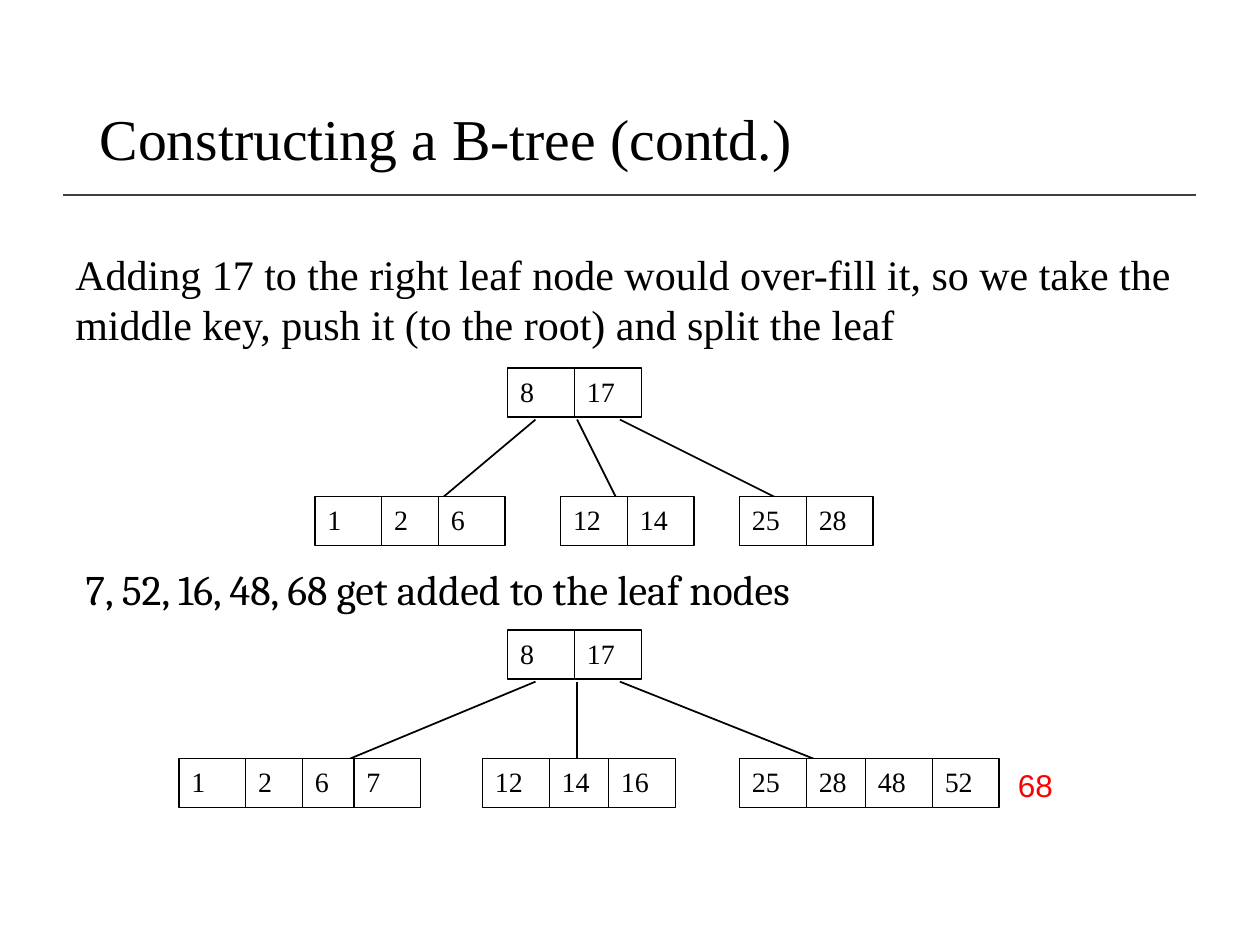
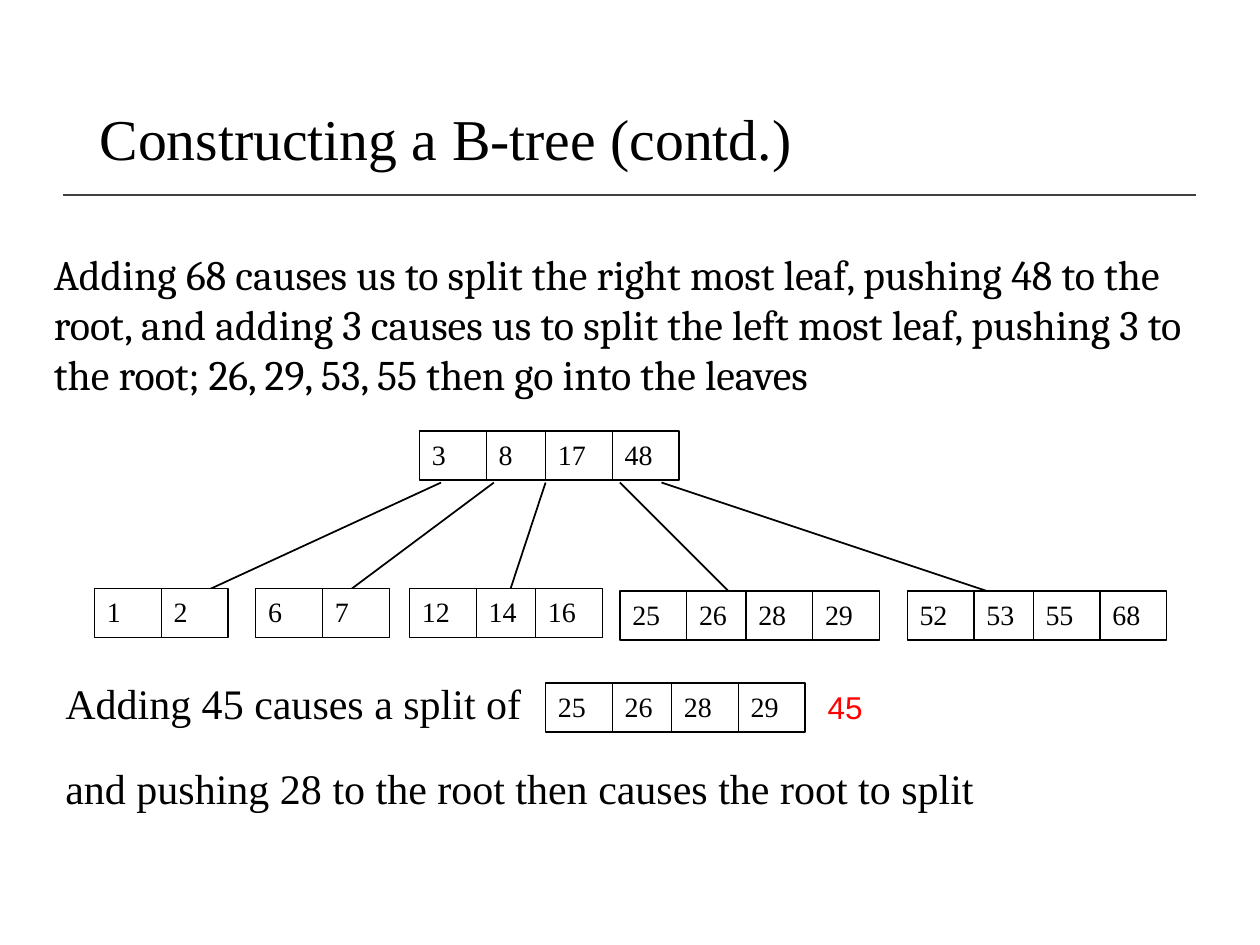
from pptx import Presentation
from pptx.dml.color import RGBColor
from pptx.enum.shapes import MSO_CONNECTOR, MSO_SHAPE
from pptx.enum.text import MSO_ANCHOR, MSO_AUTO_SIZE, PP_ALIGN
from pptx.oxml.ns import qn
from pptx.util import Inches, Pt
from lxml import etree

LINE, RECT = MSO_CONNECTOR.STRAIGHT, MSO_SHAPE.RECTANGLE
TOP, MIDDLE, LEFT = MSO_ANCHOR.TOP, MSO_ANCHOR.MIDDLE, PP_ALIGN.LEFT
GROW = MSO_AUTO_SIZE.SHAPE_TO_FIT_TEXT
SERIF, CAMBRIA, SANS = "Times New Roman", "Cambria", "Arial"
BLACK, WHITE, RED, GREY = "000000", "FFFFFF", "FF0000", "404040"

TITLE = "Constructing a B-tree (contd.)"
TITLE_BOX = (0.69, 0.4, 8.62, 1.45)
RULE = (0.5, 1.55, 9.49, 1.55)
CELL_W, CELL_H, LINK_GAP = 0.53, 0.39, 0.02
EVEN = (0, 0.53, 1, 1.53)
TIGHT = (0, 0.53, 0.98, 1.39)

SLIDES = [
    {
        "texts": [
            ("Adding 17 to the right leaf node would over-fill it, so we take the "
             "middle key, push it (to the root) and split the leaf",
             (0.5, 1.92, 9.17, 0.91), SERIF),
            ("7, 52, 16, 48, 68 get added to the leaf nodes", (0.58, 4.42, 9, 0.5), CAMBRIA),
        ],
        "trees": [
            {
                "root": (4.03, 2.92, [8, 17], EVEN),
                "leaves": [(2.5, 3.94, [1, 2, 6], TIGHT), (4.45, 3.94, [12, 14], EVEN),
                           (5.87, 3.94, [25, 28], EVEN)],
                "links": [(4.25, 3.25, 4.17), (4.58, 5, 4.17), (4.92, 6.42, 4.08)],
            },
            {
                "root": (4.03, 5, [8, 17], EVEN),
                "leaves": [(1.42, 6.02, [1, 2, 6, 7], TIGHT), (3.83, 6.02, [12, 14, 16], EVEN),
                           (5.87, 6.02, [25, 28, 48, 52], EVEN)],
                "links": [(4.25, 2.42, 6.17), (4.58, 4.58, 6.25), (4.92, 6.83, 6.17)],
            },
        ],
        "overflow": ("68", (7.98, 6.03, 0.48, 0.4)),
    },
    {
        "texts": [
            ("Adding 68 causes us to split the right most leaf, pushing 48 to the root, "
             "and adding 3 causes us to split the left most leaf, pushing 3 to the root; "
             "26, 29, 53, 55 then go into the leaves",
             (0.33, 1.92, 9.33, 1.31), CAMBRIA),
            ("Adding 45 causes a split of", (0.42, 5.33, 4, 0.5), SERIF),
            ("and pushing 28 to the root then causes the root to split",
             (0.42, 6, 9.08, 0.5), SERIF),
        ],
        "trees": [
            {
                "root": (3.33, 3.42, [3, 8, 17, 48], EVEN),
                "leaves": [(0.75, 4.67, [1, 2], EVEN), (2.03, 4.67, [6, 7], EVEN),
                           (3.25, 4.67, [12, 14, 16], EVEN),
                           (4.92, 4.69, [25, 26, 28, 29], EVEN),
                           (7.2, 4.69, [52, 53, 55, 68], EVEN)],
                "links": [(3.5, 1.33, 4.83), (3.92, 2.58, 4.83), (4.33, 4, 4.83),
                          (4.92, 5.92, 4.83), (5.25, 8.25, 4.83)],
            },
            {"root": (4.33, 5.42, [25, 26, 28, 29], EVEN), "leaves": [], "links": []},
        ],
        "overflow": ("45", (6.47, 5.41, 0.48, 0.4)),
    },
]


def rgb(color):
    return RGBColor.from_string(color)


def write(sp, text, size=24, font=SERIF, color=BLACK, anchor=TOP, spacing=None):
    tf = sp.text_frame
    tf.word_wrap = True
    tf.vertical_anchor = anchor
    p = tf.paragraphs[0]
    p.alignment = LEFT
    p.line_spacing = spacing
    r = p.add_run()
    r.text = text
    r.font.size, r.font.name = Pt(size), font
    r.font.color.rgb = rgb(color)


def add_text(s, text, box, **fmt):
    sp = s.shapes.add_textbox(*map(Inches, box))
    write(sp, text, **fmt)
    sp.text_frame.auto_size = GROW


def add_line(s, points, color=BLACK):
    line = s.shapes.add_connector(LINE, *map(Inches, points))
    line.line.color.rgb = rgb(color)
    line.line.width = Pt(1)
    etree.SubElement(line.element.spPr, qn("a:effectLst"))
    return line


def add_node(s, x, y, keys, steps):
    for key, step in zip(keys, steps):
        sp = s.shapes.add_shape(RECT, *map(Inches, (x + step, y, CELL_W, CELL_H)))
        sp.shadow.inherit = False
        sp.fill.solid()
        sp.fill.fore_color.rgb = rgb(WHITE)
        sp.line.color.rgb = rgb(BLACK)
        sp.line.width = Pt(0.75)
        write(sp, str(key), size=16)


def add_tree(s, root, leaves, links):
    start = root[1] + CELL_H + LINK_GAP
    for x1, x2, end in links:
        add_line(s, (x1, start, x2, end))
    for node in [root, *leaves]:
        add_node(s, *node)


def add_slide(prs, texts, trees, overflow):
    s = prs.slides.add_slide(prs.slide_layouts.get_by_name("Title Only"))
    title = s.shapes.title
    title.left, title.top, title.width, title.height = map(Inches, TITLE_BOX)
    write(title, TITLE, size=33, anchor=MIDDLE, spacing=0.9)
    for text, box, font in texts:
        add_text(s, text, box, font=font)
    for tree in trees:
        add_tree(s, **tree)
    add_text(s, *overflow, size=18, font=SANS, color=RED)
    return s


def main():
    prs = Presentation()
    prs.slide_width, prs.slide_height = Inches(10), Inches(7.5)
    slides = [add_slide(prs, **content) for content in SLIDES]
    rule = add_line(slides[0], RULE, GREY)
    prs.slide_master.element.cSld.spTree.append(rule.element)
    prs.save("out.pptx")


if __name__ == "__main__":
    main()
